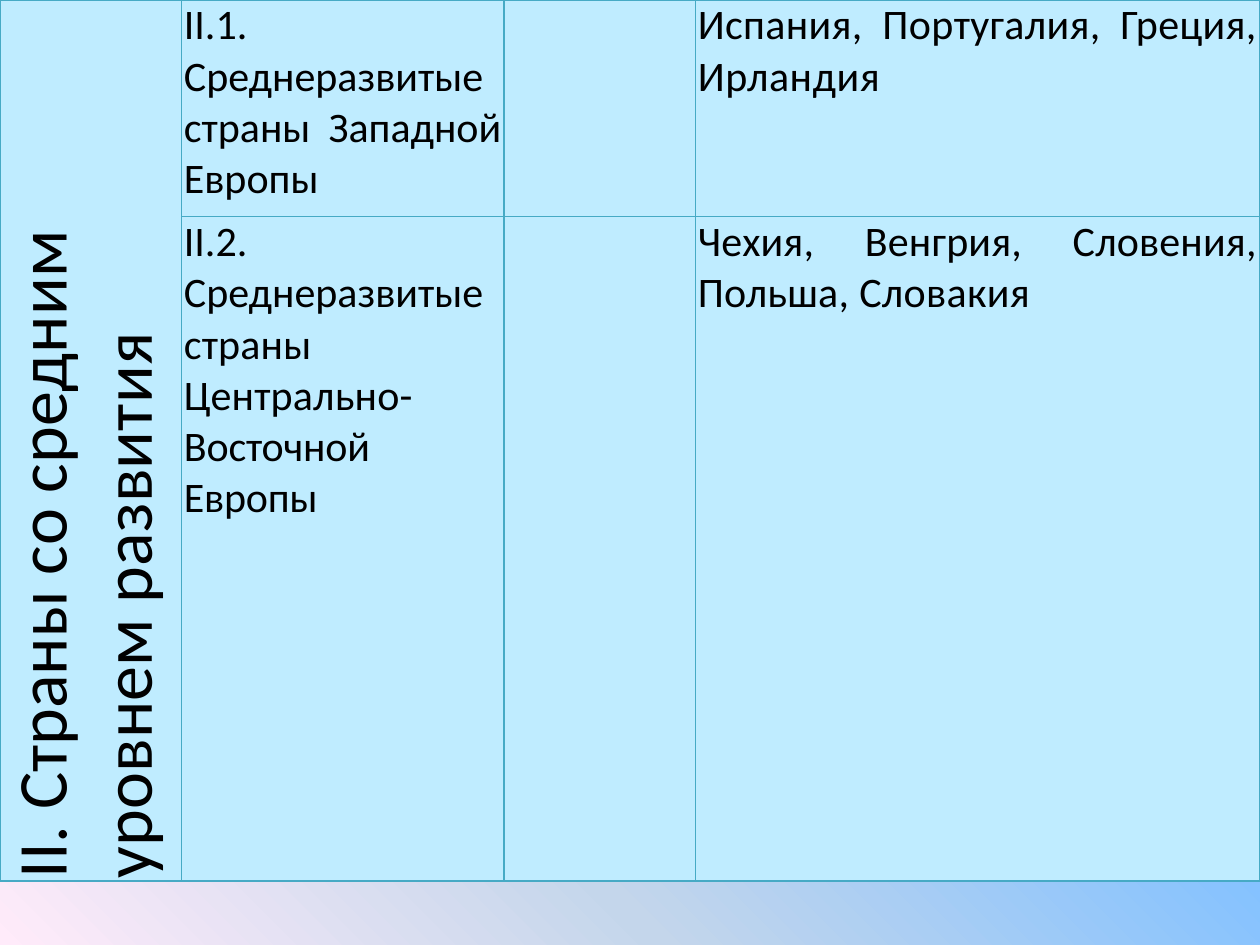
from dataclasses import dataclass

from lxml.etree import SubElement
from pptx import Presentation
from pptx.dml.color import RGBColor
from pptx.enum.text import PP_ALIGN
from pptx.oxml.ns import qn
from pptx.util import Inches, Pt


@dataclass(frozen=True)
class Theme:
    font: str = "Calibri"
    ink: str = "000000"
    cell: str = "BFECFF"
    rule: str = "46AAC5"
    width: float = 0.75
    head: int = 40
    body: int = 24
    back: tuple = ((0, "5E9EFF"), (40, "85C2FF"), (70, "C4D6EB"), (100, "FFEBFA"))


class Maker:
    def __init__(self, slide, theme):
        self.slide = slide
        self.theme = theme

    def backdrop(self):
        fill = self.slide.background.fill
        fill.gradient()
        fill.gradient_angle = 225
        stops = self.slide.element.find(".//" + qn("a:gsLst"))
        for old in list(stops):
            stops.remove(old)
        for pos, color in self.theme.back:
            stop = SubElement(stops, qn("a:gs"), pos=str(pos * 1000))
            SubElement(stop, qn("a:srgbClr"), val=color)

    def table(self, cols, rows):
        frame = self.slide.shapes.add_table(
            len(rows), len(cols), 0, 0, Inches(sum(cols)), Inches(sum(rows)))
        table = frame.table
        table.first_row = table.horz_banding = False
        for col, width in zip(table.columns, cols):
            col.width = Inches(width)
        for row, height in zip(table.rows, rows):
            row.height = Inches(height)
        for cell in table.iter_cells():
            self.paint(cell)
        return table

    def paint(self, cell):
        cell.margin_left = cell.margin_right = Inches(0.02)
        cell.margin_top = cell.margin_bottom = 0
        props = cell._tc.get_or_add_tcPr()
        for side in ("lnL", "lnR", "lnT", "lnB"):
            line = SubElement(props, qn("a:" + side), w=str(Pt(self.theme.width)))
            solid = SubElement(line, qn("a:solidFill"))
            SubElement(solid, qn("a:srgbClr"), val=self.theme.rule)
        cell.fill.solid()
        cell.fill.fore_color.rgb = RGBColor.from_string(self.theme.cell)

    def label(self, cell, lines, size):
        """Each line is a list of (text, letter spacing in points)."""
        frame = cell.text_frame
        frame.text = "\n".join("" for _ in lines)
        for para, parts in zip(frame.paragraphs, lines):
            para.alignment = PP_ALIGN.JUSTIFY
            for text, gap in parts:
                run = para.add_run()
                run.text = text
                run.font.name = self.theme.font
                run.font.size = Pt(size)
                run.font.color.rgb = RGBColor.from_string(self.theme.ink)
                run._r.get_or_add_rPr().set("spc", str(round(gap * 100)))


def main():
    deck = Presentation()
    deck.slide_width, deck.slide_height = Inches(10), Inches(7.5)
    theme = Theme()
    maker = Maker(deck.slides.add_slide(deck.slide_layouts[6]), theme)
    maker.backdrop()

    # Country table
    table = maker.table((1.44, 2.56, 1.52, 4.48), (1.72, 4.17))

    # Rotated group title over both rows
    title = table.cell(0, 0)
    title.merge(table.cell(1, 0))
    title._tc.get_or_add_tcPr().set("vert", "vert270")
    maker.label(title, [
        [("II. Страны со ", 0), ("средним ", 0.1)],
        [("уровнем развития", 0.1)],
    ], theme.head)

    # Subgroups and their countries
    groups = (
        ([("II.1. Среднеразвитые страны Западной Европы", 0)],
         [("Испания, Португалия, Греция, ", 0.2), ("Ирландия", 0.3)]),
        ([("II.2. Среднеразвитые ", 0), ("страны Центрально-", 0.1),
          ("Восточной Европы", -0.1)],
         [("Чехия, Венгрия, Словения, Поль", 0.1), ("ша, Словакия", 0.2)]),
    )
    for row, (group, lands) in enumerate(groups):
        maker.label(table.cell(row, 1), [group], theme.body)
        maker.label(table.cell(row, 3), [lands], theme.body)

    deck.save("out.pptx")


if __name__ == "__main__":
    main()
